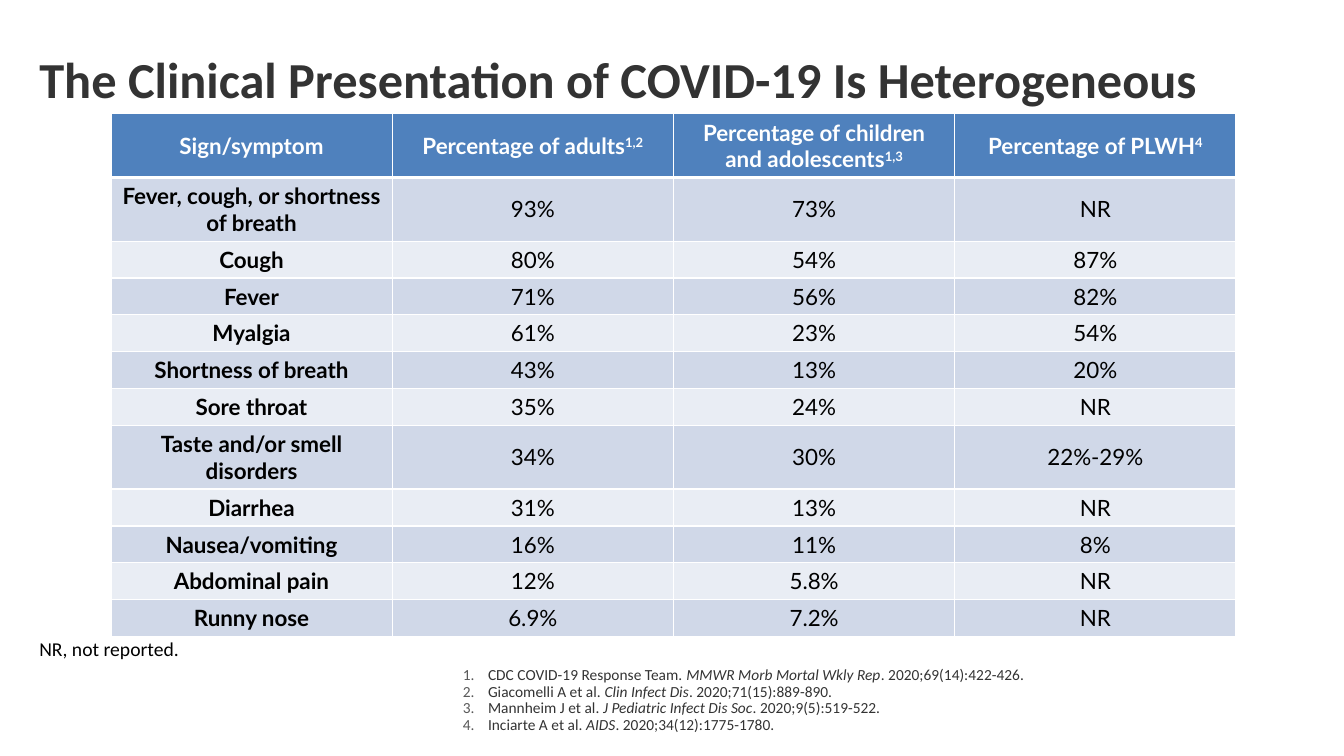
from lxml.etree import SubElement
from pptx import Presentation
from pptx.dml.color import RGBColor
from pptx.enum.text import MSO_ANCHOR as Anchor, MSO_AUTO_SIZE as AutoSize, PP_ALIGN as Align
from pptx.oxml.ns import qn
from pptx.util import Inches, Pt

TITLE = "The Clinical Presentation of COVID-19 Is Heterogeneous"
HEADERS = [
    ("Sign/symptom", ""),
    ("Percentage of adults", "1,2"),
    ("Percentage of children and adolescents", "1,3"),
    ("Percentage of PLWH", "4"),
]
SYMPTOMS = [
    ("Fever, cough, or shortness of breath", "93%", "73%", "NR"),
    ("Cough", "80%", "54%", "87%"),
    ("Fever", "71%", "56%", "82%"),
    ("Myalgia", "61%", "23%", "54%"),
    ("Shortness of breath", "43%", "13%", "20%"),
    ("Sore throat", "35%", "24%", "NR"),
    ("Taste and/or smell disorders", "34%", "30%", "22%-29%"),
    ("Diarrhea", "31%", "13%", "NR"),
    ("Nausea/vomiting", "16%", "11%", "8%"),
    ("Abdominal pain", "12%", "5.8%", "NR"),
    ("Runny nose", "6.9%", "7.2%", "NR"),
]
REFERENCES = [
    ("CDC COVID-19 Response Team. ", "MMWR Morb Mortal Wkly Rep", ". 2020;69(14):422-426."),
    ("Giacomelli A et al. ", "Clin Infect Dis", ". 2020;71(15):889-890."),
    ("Mannheim J et al. ", "J Pediatric Infect Dis Soc", ". 2020;9(5):519-522."),
    ("Inciarte A et al. ", "AIDS", ". 2020;34(12):1775-1780."),
]
FOOTNOTE = "NR, not reported."
COLORS = {
    "ink": "333333", "black": "000000", "white": "FFFFFF", "number": "595959",
    "header": "4F81BD", "odd": "D0D8E8", "even": "E9EDF4",
}
TITLE_FONT = {"name": "Calibri", "size": Pt(36), "bold": True}
REFERENCE_FONT = {"name": "Calibri", "size": Pt(11), "bold": False}
FOOTNOTE_FONT = {"name": "Calibri", "size": Pt(14), "bold": False}
CELL_FONT = {"name": "Lato", "size": Pt(16)}
COLUMN_WIDTH = 2.79
TALL_ROW, SHORT_ROW = 0.63, 0.36
TALL_ROWS = {0, 1, 7}
THIN_BORDER, HEADER_BORDER = 1, 3


def color(name):
    return RGBColor.from_string(COLORS[name])


def add_span(para, text, ink, formats):
    span = para.add_run()
    span.text = text
    span.font.color.rgb = color(ink)
    for key, value in formats.items():
        setattr(span.font, key, value)
    return span


def place(box, left, top, width, height, anchor):
    box.left, box.top, box.width, box.height = map(Inches, (left, top, width, height))
    box.text_frame.auto_size = AutoSize.NONE
    box.text_frame.vertical_anchor = anchor
    box.text_frame.word_wrap = True
    return box.text_frame


def set_paragraph(para):
    para.alignment = Align.LEFT
    para.line_spacing = 0.9
    para.space_before = Pt(0)


def set_bullet(para, numbered):
    indent = Inches(0.25) if numbered else 0
    properties = para._p.get_or_add_pPr()
    properties.set("marL", str(indent))
    properties.set("indent", str(-indent))
    if numbered:
        bullet_color = SubElement(properties, qn("a:buClr"))
        SubElement(bullet_color, qn("a:srgbClr"), val=COLORS["number"])
        SubElement(properties, qn("a:buAutoNum"), type="arabicPeriod")
    else:
        SubElement(properties, qn("a:buNone"))


def set_borders(cell, top, bottom):
    widths = {"L": THIN_BORDER, "R": THIN_BORDER, "T": top, "B": bottom}
    properties = cell._tc.get_or_add_tcPr()
    for side, width in widths.items():
        line = SubElement(properties, qn(f"a:ln{side}"), w=str(Pt(width)))
        fill = SubElement(line, qn("a:solidFill"))
        SubElement(fill, qn("a:srgbClr"), val=COLORS["white"])


def fill_cell(cell, row, column, text, note):
    set_borders(
        cell,
        HEADER_BORDER if row == 1 else THIN_BORDER,
        HEADER_BORDER if row == 0 else THIN_BORDER,
    )
    cell.fill.solid()
    cell.fill.fore_color.rgb = color("header" if row == 0 else "odd" if row % 2 else "even")
    cell.vertical_anchor = Anchor.MIDDLE
    para = cell.text_frame.paragraphs[0]
    para.alignment = Align.CENTER
    formats = {**CELL_FONT, "bold": row == 0 or column == 0}
    ink = "black" if row else "white"
    add_span(para, text, ink, formats)
    if note:
        add_span(para, note, ink, formats).font._element.set("baseline", "30000")


def add_symptom_table(page):
    rows = [HEADERS] + [[(text, "") for text in symptom] for symptom in SYMPTOMS]
    heights = [TALL_ROW if row in TALL_ROWS else SHORT_ROW for row in range(len(rows))]
    table = page.shapes.add_table(
        len(rows), len(HEADERS), Inches(1.1), Inches(1.13),
        Inches(COLUMN_WIDTH * len(HEADERS)), Inches(sum(heights)),
    ).table
    for column in table.columns:
        column.width = Inches(COLUMN_WIDTH)
    for row, height in enumerate(heights):
        table.rows[row].height = Inches(height)
        for column, (text, note) in enumerate(rows[row]):
            fill_cell(table.cell(row, column), row, column, text, note)


def main():
    deck = Presentation()
    deck.slide_width, deck.slide_height = Inches(13.33), Inches(7.5)
    page = deck.slides.add_slide(deck.slide_layouts[3])
    title, references, footnote = page.placeholders

    para = place(title, 0.29, 0.19, 12.78, 1.25, Anchor.MIDDLE).paragraphs[0]
    set_paragraph(para)
    add_span(para, TITLE, "ink", TITLE_FONT)

    add_symptom_table(page)

    frame = place(references, 4.49, 6.57, 8.57, 0.8, Anchor.TOP)
    for index, (authors, journal, issue) in enumerate(REFERENCES):
        para = frame.add_paragraph() if index else frame.paragraphs[0]
        set_bullet(para, True)
        set_paragraph(para)
        for text in (authors, journal, issue):
            add_span(para, text, "ink", {**REFERENCE_FONT, "italic": text == journal})

    para = place(footnote, 0.29, 6.29, 12.78, 0.3, Anchor.TOP).paragraphs[0]
    set_bullet(para, False)
    set_paragraph(para)
    add_span(para, FOOTNOTE, "black", FOOTNOTE_FONT)

    deck.save("out.pptx")


if __name__ == "__main__":
    main()
